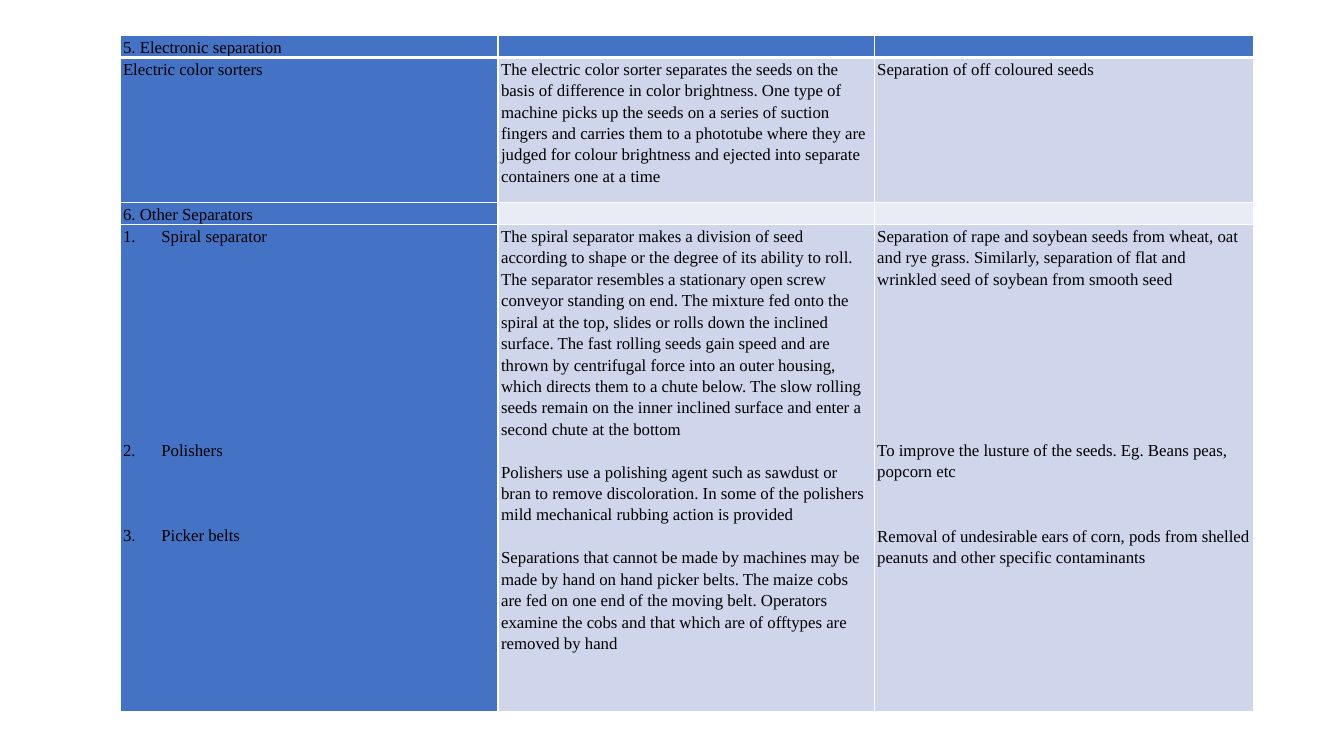
from dataclasses import dataclass

from lxml.etree import SubElement
from pptx import Presentation
from pptx.dml.color import RGBColor
from pptx.oxml.ns import qn
from pptx.table import _Cell as Cell
from pptx.util import Inches, Pt

COLORS = {"accent": "4472C4", "band": "CFD5EA", "pale": "E9EBF5",
          "text": "000000", "border": "FFFFFF"}
LINE_PITCH = 15.28
COLUMN_WIDTHS = (3.75, 3.73, 3.76)
MARGINS = {"margin_left": Inches(0.03), "margin_right": Inches(0.03),
           "margin_top": 0, "margin_bottom": 0}
TEXT_FONT = {"name": "Times New Roman", "size": Pt(12), "bold": False}
TABLE_FLAGS = {"first_row": False, "horz_banding": False}


@dataclass(frozen=True)
class Entry:
    text: str
    lines_before: int = 0
    numbered: bool = False


@dataclass(frozen=True)
class CellContent:
    fill: str
    entries: tuple[Entry, ...] = ()


@dataclass(frozen=True)
class MethodRow:
    height: float
    cells: tuple[CellContent, ...]
    bottom_border: float = 1


METHOD_ROWS = (
    MethodRow(0.22, (
        CellContent("accent", (Entry("5. Electronic separation"),)),
        CellContent("accent"),
        CellContent("accent"),
    ), bottom_border=3),
    MethodRow(1.44, (
        CellContent("accent", (Entry("Electric color sorters"),)),
        CellContent("band", (Entry(
            "The electric color sorter separates the seeds on the basis of difference in color "
            "brightness. One type of machine picks up the seeds on a series of suction fingers "
            "and carries them to a phototube where they are judged for colour brightness and "
            "ejected into separate containers one at a time"),)),
        CellContent("band", (Entry("Separation of off coloured seeds"),)),
    )),
    MethodRow(0.22, (
        CellContent("accent", (Entry("6. Other Separators"),)),
        CellContent("pale"),
        CellContent("pale"),
    )),
    MethodRow(4.83, (
        CellContent("accent", (
            Entry("Spiral separator", numbered=True),
            Entry("Polishers", 9, True),
            Entry("Picker belts", 3, True),
        )),
        CellContent("band", (
            Entry(
                "The spiral separator makes a division of seed according to shape or the degree "
                "of its ability to roll. The separator resembles a stationary open screw conveyor "
                "standing on end. The mixture fed onto the spiral at the top, slides or rolls down "
                "the inclined surface. The fast rolling seeds gain speed and are thrown by "
                "centrifugal force into an outer housing, which directs them to a chute below. "
                "The slow rolling seeds remain on the inner inclined surface and enter a second "
                "chute at the bottom"),
            Entry(
                "Polishers use a polishing agent such as sawdust or bran to remove discoloration. "
                "In some of the polishers mild mechanical rubbing action is provided", 1),
            Entry(
                "Separations that cannot be made by machines may be made by hand on hand picker "
                "belts. The maize cobs are fed on one end of the moving belt. Operators examine "
                "the cobs and that which are of offtypes are removed by hand", 1),
        )),
        CellContent("band", (
            Entry(
                "Separation of rape and soybean seeds from wheat, oat and rye grass. Similarly, "
                "separation of flat and wrinkled seed of soybean from smooth seed"),
            Entry("To improve the lusture of the seeds. Eg. Beans peas, popcorn etc", 7),
            Entry(
                "Removal of undesirable ears of corn, pods from shelled peanuts and other "
                "specific contaminants", 2),
        )),
    )),
)


def apply_format(target: object, values: dict) -> None:
    for attribute, value in values.items():
        setattr(target, attribute, value)


def add_borders(cell: Cell, bottom_width: float) -> None:
    properties = cell._tc.get_or_add_tcPr()
    for side, width in {"L": 1, "R": 1, "T": 1, "B": bottom_width}.items():
        border = SubElement(properties, qn(f"a:ln{side}"), w=str(Pt(width)))
        line_fill = SubElement(border, qn("a:solidFill"))
        SubElement(line_fill, qn("a:srgbClr"), val=COLORS["border"])


def write_entries(cell: Cell, entries: tuple[Entry, ...]) -> None:
    frame = cell.text_frame
    for index, entry in enumerate(entries):
        paragraph = frame.add_paragraph() if index else frame.paragraphs[0]
        paragraph.line_spacing = 1.15
        if entry.lines_before:
            paragraph.space_before = Pt(entry.lines_before * LINE_PITCH)
        if entry.numbered:
            properties = paragraph._p.get_or_add_pPr()
            properties.set("marL", str(Inches(0.38)))
            properties.set("indent", str(-Inches(0.38)))
            SubElement(properties, qn("a:buFont"), typeface=TEXT_FONT["name"])
            SubElement(properties, qn("a:buAutoNum"), type="arabicPeriod")
        run = paragraph.add_run()
        run.text = entry.text
        apply_format(run.font, TEXT_FONT)
        run.font.color.rgb = RGBColor.from_string(COLORS["text"])
    if not entries:
        SubElement(frame.paragraphs[0]._p, qn("a:endParaRPr"), sz="1200")


def fill_cell(cell: Cell, content: CellContent, bottom_width: float) -> None:
    apply_format(cell, MARGINS)
    add_borders(cell, bottom_width)
    cell.fill.solid()
    cell.fill.fore_color.rgb = RGBColor.from_string(COLORS[content.fill])
    write_entries(cell, content.entries)


def main() -> None:
    deck = Presentation()
    deck.slide_width, deck.slide_height = Inches(13.33), Inches(7.5)
    slide = deck.slides.add_slide(deck.slide_layouts[6])
    separators = slide.shapes.add_table(
        len(METHOD_ROWS), len(COLUMN_WIDTHS), Inches(1.19), Inches(0.35),
        Inches(sum(COLUMN_WIDTHS)), Inches(sum(row.height for row in METHOD_ROWS))).table
    apply_format(separators, TABLE_FLAGS)
    for column, width in zip(separators.columns, COLUMN_WIDTHS):
        column.width = Inches(width)
    for table_row, method in zip(separators.rows, METHOD_ROWS):
        table_row.height = Inches(method.height)
        for cell, content in zip(table_row.cells, method.cells):
            fill_cell(cell, content, method.bottom_border)
    deck.save("out.pptx")


if __name__ == "__main__":
    main()
